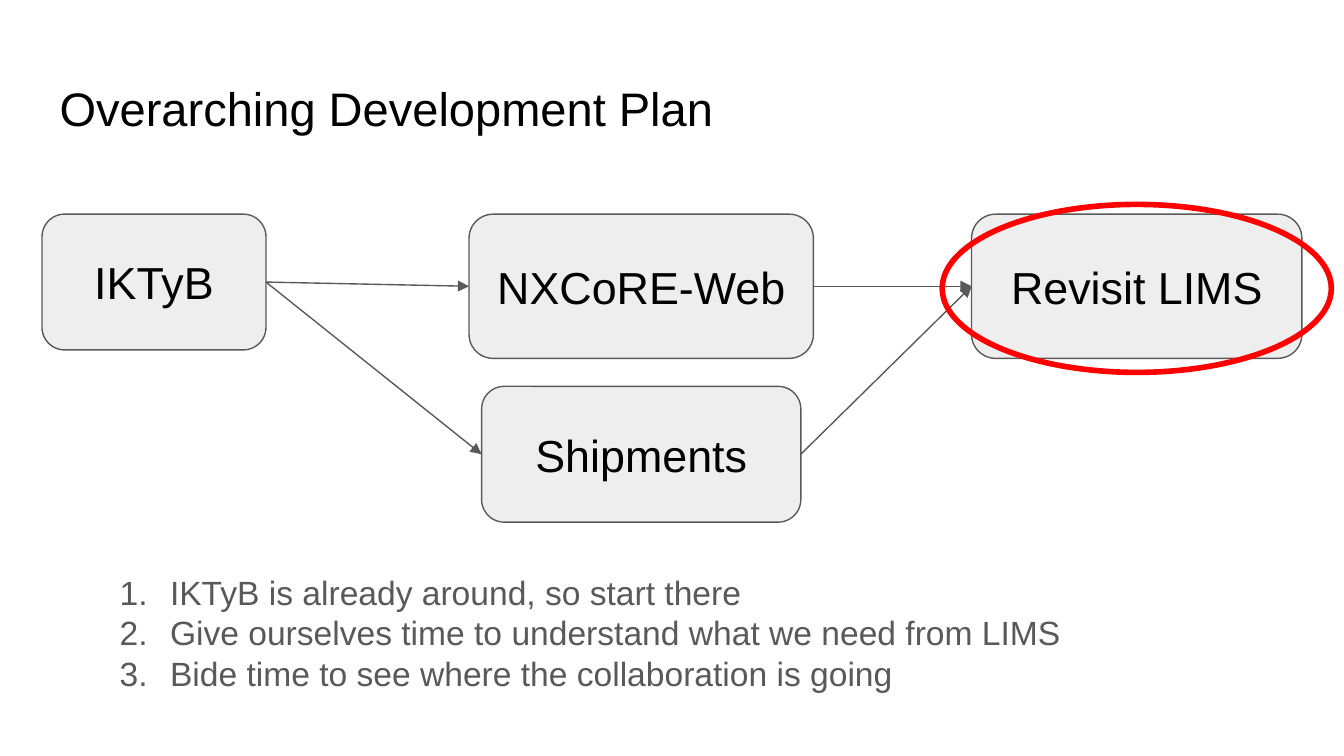
import dataclasses

import lxml.etree
import pptx
import pptx.dml.color
import pptx.enum.shapes
import pptx.enum.text
import pptx.oxml.ns
import pptx.util

PX = 9525
FONT = "Arial"
BLACK, GREY, PALE, RED = "000000", "595959", "EEEEEE", "FF0000"
RIGHT_SITE, LEFT_SITE = 3, 1
INSET = pptx.util.Inches(0.1)
SHAPES = pptx.enum.shapes.MSO_SHAPE


@dataclasses.dataclass(frozen=True)
class Box:
    left: int
    top: int
    width: int
    height: int

    def emu(self) -> list[int]:
        """Give the sides in EMU."""
        return [side * PX for side in dataclasses.astuple(self)]


@dataclasses.dataclass(frozen=True)
class Stage:
    label: str
    box: Box


STAGES = [
    Stage("IKTyB", Box(30, 153, 160, 97)),
    Stage("NXCoRE-Web", Box(335, 153, 246, 103)),
    Stage("Revisit LIMS", Box(694, 153, 236, 103)),
    Stage("Shipments", Box(344, 276, 228, 97)),
]
FLOWS = [(0, 1), (0, 3), (1, 2), (3, 2)]
REASONS = [
    "IKTyB is already around, so start there",
    "Give ourselves time to understand what we need from LIMS",
    "Bide time to see where the collaboration is going",
]


def rgb(value: str) -> pptx.dml.color.RGBColor:
    """Turn a hex string into a colour."""
    return pptx.dml.color.RGBColor.from_string(value)


def add_child(parent, tag: str, **attributes: str):
    """Append a DrawingML element to its parent."""
    return lxml.etree.SubElement(parent, pptx.oxml.ns.qn(tag), attributes)


def style_text(frame, size: float, colour: str) -> None:
    """Set insets, wrapping and the font of every run."""
    frame.word_wrap = True
    frame.margin_left = frame.margin_right = INSET
    frame.margin_top = frame.margin_bottom = INSET
    for paragraph in frame.paragraphs:
        for run in paragraph.runs:
            run.font.name = FONT
            run.font.size = pptx.util.Pt(size)
            run.font.color.rgb = rgb(colour)


def style_line(line, colour: str, width: float) -> None:
    """Set the colour and width of a line."""
    line.color.rgb = rgb(colour)
    line.width = pptx.util.Pt(width)


def add_title(slide, text: str, box: Box) -> None:
    """Place and format the title placeholder."""
    title = slide.shapes.title
    title.left, title.top, title.width, title.height = box.emu()
    title.text_frame.text = text
    title.text_frame.vertical_anchor = pptx.enum.text.MSO_ANCHOR.TOP
    title.text_frame.paragraphs[0].alignment = pptx.enum.text.PP_ALIGN.LEFT
    style_text(title.text_frame, 25.2, BLACK)


def add_stage(slide, stage: Stage):
    """Draw one stage of the plan as a rounded box."""
    card = slide.shapes.add_shape(SHAPES.ROUNDED_RECTANGLE, *stage.box.emu())
    card.shadow.inherit = False
    card.fill.solid()
    card.fill.fore_color.rgb = rgb(PALE)
    style_line(card.line, GREY, 0.75)
    card.text_frame.text = stage.label
    card.text_frame.vertical_anchor = pptx.enum.text.MSO_ANCHOR.MIDDLE
    card.text_frame.paragraphs[0].alignment = pptx.enum.text.PP_ALIGN.CENTER
    style_text(card.text_frame, 24, BLACK)
    return card


def add_flow(slide, source, target) -> None:
    """Draw an arrow from one stage to the next."""
    straight = pptx.enum.shapes.MSO_CONNECTOR.STRAIGHT
    arrow = slide.shapes.add_connector(straight, 0, 0, 0, 0)
    arrow.begin_connect(source, RIGHT_SITE)
    arrow.end_connect(target, LEFT_SITE)
    style_line(arrow.line, GREY, 0.75)
    add_child(arrow.line._get_or_add_ln(), "a:tailEnd", type="triangle")
    add_child(arrow._element.spPr, "a:effectLst")


def add_highlight(slide, box: Box) -> None:
    """Ring the stage in focus."""
    ring = slide.shapes.add_shape(SHAPES.OVAL, *box.emu())
    ring.shadow.inherit = False
    ring.fill.background()
    style_line(ring.line, RED, 3)


def add_numbered_list(slide, items: list[str], box: Box) -> None:
    """Write the items as a numbered list."""
    frame = slide.shapes.add_textbox(*box.emu()).text_frame
    frame.text = "\n".join(items)
    style_text(frame, 18, GREY)
    for paragraph in frame.paragraphs:
        properties = paragraph._p.get_or_add_pPr()
        properties.set("marL", str(48 * PX))
        properties.set("indent", str(-36 * PX))
        bullet_colour = add_child(properties, "a:buClr")
        add_child(bullet_colour, "a:srgbClr", val=GREY)
        add_child(properties, "a:buFont", typeface=FONT)
        add_child(properties, "a:buAutoNum", type="arabicPeriod")


def main() -> None:
    """Build the development plan slide."""
    deck = pptx.Presentation()
    deck.slide_width, deck.slide_height = 960 * PX, 540 * PX
    slide = deck.slides.add_slide(deck.slide_layouts.get_by_name("Title Only"))
    add_title(slide, "Overarching Development Plan", Box(33, 47, 895, 60))
    cards = [add_stage(slide, stage) for stage in STAGES]
    for source, target in FLOWS:
        add_flow(slide, cards[source], cards[target])
    add_highlight(slide, Box(673, 146, 278, 120))
    add_numbered_list(slide, REASONS, Box(64, 399, 718, 124))
    deck.save("out.pptx")


if __name__ == "__main__":
    main()
